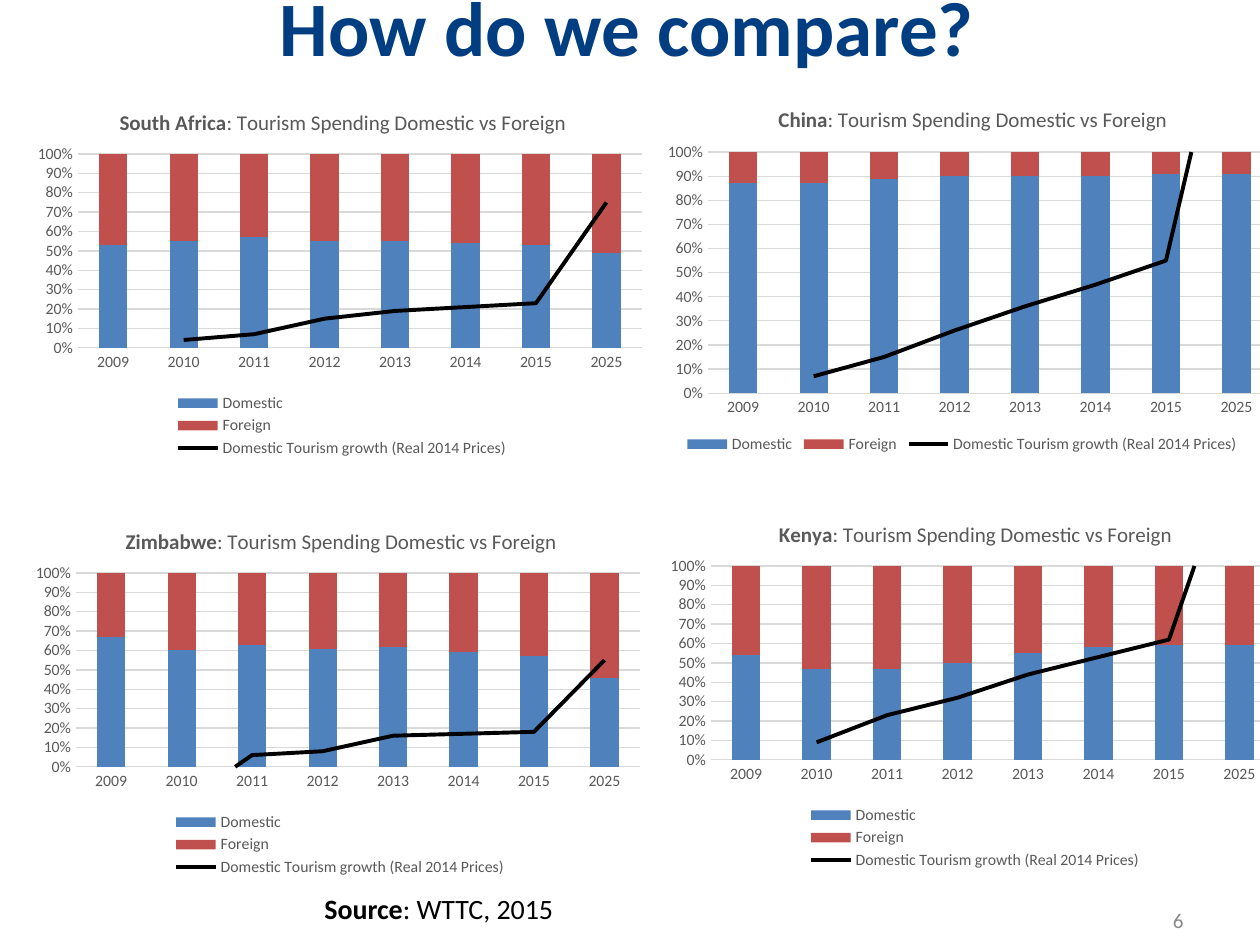
from lxml import etree
from pptx import Presentation
from pptx.chart.data import CategoryChartData
from pptx.dml.color import RGBColor
from pptx.enum.chart import XL_CHART_TYPE, XL_LEGEND_POSITION, XL_MARKER_STYLE, XL_TICK_MARK
from pptx.enum.text import MSO_ANCHOR, MSO_AUTO_SIZE, PP_ALIGN
from pptx.oxml.ns import qn
from pptx.util import Emu, Pt

STACKED = XL_CHART_TYPE.COLUMN_STACKED
BOTTOM = XL_LEGEND_POSITION.BOTTOM
NO_MARKER = XL_MARKER_STYLE.NONE
NO_TICK = XL_TICK_MARK.NONE
MIDDLE = MSO_ANCHOR.MIDDLE
FIT_SHAPE = MSO_AUTO_SIZE.SHAPE_TO_FIT_TEXT
CENTER, RIGHT, LEFT = PP_ALIGN.CENTER, PP_ALIGN.RIGHT, PP_ALIGN.LEFT

NAVY = RGBColor(0x00, 0x3D, 0x81)
BLACK = RGBColor(0x00, 0x00, 0x00)
GRAY = RGBColor(0x89, 0x89, 0x89)
DARK_GRAY = RGBColor(0x59, 0x59, 0x59)
LIGHT_GRAY = RGBColor(0xD9, 0xD9, 0xD9)
BLUE = RGBColor(0x4F, 0x81, 0xBD)
RED = RGBColor(0xC0, 0x50, 0x4D)

FONT = "Calibri"
PX_PER_INCH = 126
CHART_W, CHART_H = 630, 378
YEARS = ["2009", "2010", "2011", "2012", "2013", "2014", "2015", "2025"]

# Plot and legend boxes (left, top, width, height) in px within a chart
TALL_LEGEND = ((53, 68, 564, 194), (149, 304, 335, 72))
FLAT_LEGEND = ((53, 69, 564, 241), (26, 350, 562, 26))

# Country, chart left and top, title left in chart, boxes, domestic share, growth
COUNTRIES = [
    ("South Africa", 25, 86, 91, TALL_LEGEND,
     [0.53, 0.55, 0.57, 0.55, 0.55, 0.54, 0.53, 0.49],
     [None, 0.04, 0.07, 0.15, 0.19, 0.21, 0.23, 0.75]),
    ("China", 655, 83, 120, FLAT_LEGEND,
     [0.87, 0.87, 0.89, 0.9, 0.9, 0.9, 0.91, 0.91],
     [None, 0.07, 0.15, 0.26, 0.36, 0.45, 0.55, 1.8]),
    ("Zimbabwe", 23, 505, 99, TALL_LEGEND,
     [0.67, 0.6, 0.63, 0.61, 0.62, 0.59, 0.57, 0.46],
     [None, -0.19, 0.06, 0.08, 0.16, 0.17, 0.18, 0.55]),
    ("Kenya", 658, 498, 117, TALL_LEGEND,
     [0.54, 0.47, 0.47, 0.5, 0.55, 0.58, 0.59, 0.59],
     [None, 0.09, 0.23, 0.32, 0.44, 0.53, 0.62, 1.67]),
]


def px(n):
    return Emu(round(n * 914400 / PX_PER_INCH))


def set_font(font, size, color, bold=None):
    font.name = FONT
    font.size = Pt(size)
    font.color.rgb = color
    font.bold = bold


def add_title(slide, text):
    sp = slide.shapes.title
    sp.left, sp.top, sp.width, sp.height = px(60), px(-53), px(1134), px(158)
    tf = sp.text_frame
    tf.text = text
    tf.vertical_anchor = MIDDLE
    p = tf.paragraphs[0]
    p.alignment = CENTER
    set_font(p.font, 44, NAVY, True)


def add_text(slide, box, text, size, color, align=LEFT, lead=""):
    """Text box whose optional lead is bold."""
    tf = slide.shapes.add_textbox(*map(px, box)).text_frame
    p = tf.paragraphs[0]
    p.alignment = align
    set_font(p.font, size, color)
    if lead:
        r = p.add_run()
        r.text = lead
        r.font.bold = True
    p.add_run().text = text
    return tf


def place(element, index, box, inner=False):
    """Give a chart part a manual layout, as its child at index."""
    for old in element.findall(qn("c:layout")):
        element.remove(old)
    layout = etree.Element(qn("c:layout"))
    manual = etree.SubElement(layout, qn("c:manualLayout"))
    values = [("layoutTarget", "inner")] if inner else []
    values += [("xMode", "edge"), ("yMode", "edge")]
    sizes = (CHART_W, CHART_H, CHART_W, CHART_H)
    values += [(k, f"{n / size:.3f}") for k, n, size in zip("xywh", box, sizes)]
    for name, value in values:
        etree.SubElement(manual, qn(f"c:{name}")).set("val", value)
    element.insert(index, layout)


def move_last_series_to_line(chart):
    bar = chart.plots[0]._element
    ser = bar.findall(qn("c:ser"))[-1]
    for bar_only in ser.findall(qn("c:invertIfNegative")):
        ser.remove(bar_only)
    line = etree.Element(qn("c:lineChart"))
    etree.SubElement(line, qn("c:grouping")).set("val", "standard")
    etree.SubElement(line, qn("c:varyColors")).set("val", "0")
    line.append(ser)
    etree.SubElement(line, qn("c:marker")).set("val", "1")
    for axis in bar.findall(qn("c:axId")):
        etree.SubElement(line, qn("c:axId")).set("val", axis.get("val"))
    bar.addnext(line)


def format_series(chart):
    bars, lines = chart.plots
    bars.gap_width, bars.overlap = 150, 100
    bars.vary_by_categories = False
    for series, color in zip(bars.series, (BLUE, RED)):
        series.format.fill.solid()
        series.format.fill.fore_color.rgb = color
    growth = lines.series[0]
    growth.format.line.color.rgb = BLACK
    growth.format.line.width = Pt(2.25)
    growth.marker.style = NO_MARKER
    growth.smooth = False


def format_axes(chart):
    years, share = chart.category_axis, chart.value_axis
    for axis in (years, share):
        axis.major_tick_mark = axis.minor_tick_mark = NO_TICK
        set_font(axis.tick_labels.font, 9, DARK_GRAY)
    share.minimum_scale, share.maximum_scale, share.major_unit = 0, 1, 0.1
    share.tick_labels.number_format = "0%"
    share.tick_labels.number_format_is_linked = False
    share.format.line.fill.background()
    for line in (years.format.line, share.major_gridlines.format.line):
        line.color.rgb = LIGHT_GRAY
        line.width = Pt(0.75)


def add_spending_chart(slide, country, left, top, title_left, boxes, domestic, growth):
    data = CategoryChartData(number_format="0%")
    data.categories = YEARS
    data.add_series("Domestic", domestic)
    data.add_series("Foreign", [round(1 - share, 2) for share in domestic])
    data.add_series("Domestic Tourism growth (Real 2014 Prices)", growth)
    box = map(px, (left, top, CHART_W, CHART_H))
    chart = slide.shapes.add_chart(STACKED, *box, data).chart
    set_font(chart.font, 10, BLACK)
    move_last_series_to_line(chart)
    format_series(chart)
    format_axes(chart)

    # Title with the country in bold
    chart.has_title = True
    p = chart.chart_title.text_frame.paragraphs[0]
    for text, bold in ((country, True), (": Tourism Spending Domestic vs Foreign", False)):
        r = p.add_run()
        r.text = text
        set_font(r.font, 12, DARK_GRAY, bold)

    chart.has_legend = True
    chart.legend.position = BOTTOM
    chart.legend.include_in_layout = False
    set_font(chart.legend.font, 9, DARK_GRAY)

    # Manual layout of plot, legend and title
    plot_box, legend_box = boxes
    place(chart.plots[0]._element.getparent(), 0, plot_box, inner=True)
    place(chart.legend._element, 1, legend_box)
    place(chart.chart_title._element, 1, (title_left, 19))


def main():
    prs = Presentation()
    prs.slide_width, prs.slide_height = px(1260), px(945)
    slide = prs.slides.add_slide(prs.slide_layouts[5])
    add_title(slide, "How do we compare?")

    # Slide number and source
    tf = add_text(slide, (902, 895, 294, 50), "6", 12, GRAY, RIGHT)
    tf.word_wrap = True
    tf.vertical_anchor = MIDDLE
    tf = add_text(slide, (312, 883, 256, 49), ": WTTC, 2015", 16, BLACK, lead="Source")
    tf.word_wrap = False
    tf.auto_size = FIT_SHAPE
    tf.paragraphs[0].line_spacing = 1.07
    tf.paragraphs[0].space_after = Pt(8)

    for country in COUNTRIES:
        add_spending_chart(slide, *country)
    prs.save("out.pptx")


if __name__ == "__main__":
    main()
